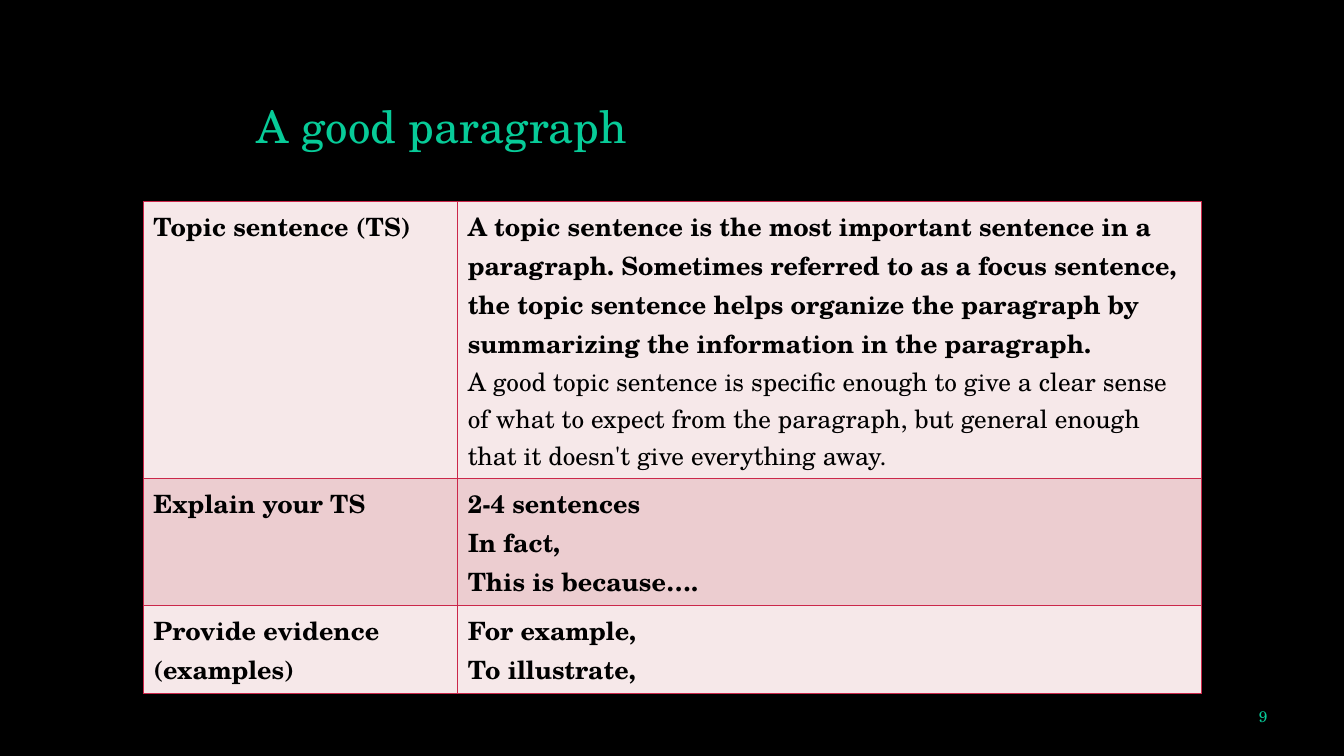
from dataclasses import dataclass

from lxml import etree
from pptx import Presentation
from pptx import util as u
from pptx.dml import color
from pptx.enum import text
from pptx.oxml import ns

FONT = "TeX Gyre Schola"
GREEN = "07CB98"
BLACK = "000000"
ROSE = "CB274A"
PALE = "F6E8E9"
PINK = "ECCDD0"


@dataclass
class Label:
    words: str
    box: tuple[float, float, float, float]
    size: float
    anchor: text.MSO_ANCHOR
    align: text.PP_ALIGN
    lead: float = 1.0


@dataclass
class Row:
    head: str
    body: list[str]
    high: float
    fill: str
    plain: int = -1


LABELS = [
    Label("A good paragraph", (2.45, 0.4, 9.47, 1.17), 32,
          text.MSO_ANCHOR.BOTTOM, text.PP_ALIGN.LEFT, 0.9),
    Label("9", (11.76, 6.98, 0.91, 0.25), 11,
          text.MSO_ANCHOR.MIDDLE, text.PP_ALIGN.RIGHT),
]

ROWS = [
    Row("Topic sentence (TS)", [
        "A topic sentence is the most important sentence in a paragraph. "
        "Sometimes referred to as a focus sentence, the topic sentence helps "
        "organize the paragraph by summarizing the information in the paragraph.",
        "A good topic sentence is specific enough to give a clear sense of what "
        "to expect from the paragraph, but general enough that it doesn't give "
        "everything away.",
    ], 2.75, PALE, plain=1),
    Row("Explain your TS",
        ["2-4 sentences", "In fact,", "This is because…."], 1.26, PINK),
    Row("Provide evidence (examples)",
        ["For example,", "To illustrate,"], 0.87, PALE),
]
COLS = [3.12, 7.38]


def rgb(code: str) -> color.RGBColor:
    return color.RGBColor.from_string(code)


def style(run, size: float, code: str, bold: bool = False) -> None:
    run.font.name = FONT
    run.font.size = u.Pt(size)
    run.font.bold = bold
    run.font.color.rgb = rgb(code)


def add_label(slide, label: Label) -> None:
    box = slide.shapes.add_textbox(*map(u.Inches, label.box))
    frame = box.text_frame
    frame.word_wrap = True
    frame.vertical_anchor = label.anchor
    frame.text = label.words
    para = frame.paragraphs[0]
    para.alignment = label.align
    para.line_spacing = label.lead
    style(para.runs[0], label.size, GREEN)


def add_edges(cell) -> None:
    props = cell._tc.get_or_add_tcPr()
    for side in ("lnL", "lnR", "lnT", "lnB"):
        line = etree.SubElement(props, ns.qn(f"a:{side}"), w=str(u.Pt(1)))
        fill = etree.SubElement(line, ns.qn("a:solidFill"))
        etree.SubElement(fill, ns.qn("a:srgbClr"), val=ROSE)


def fill_cell(cell, lines: list[str], back: str, plain: int = -1) -> None:
    add_edges(cell)
    cell.fill.solid()
    cell.fill.fore_color.rgb = rgb(back)
    cell.text_frame.text = "\n".join(lines)
    for i, para in enumerate(cell.text_frame.paragraphs):
        style(para.runs[0], 18, BLACK, i != plain)


def add_grid(slide) -> None:
    high = sum(row.high for row in ROWS)
    area = map(u.Inches, (1.42, 2, sum(COLS), high))
    table = slide.shapes.add_table(len(ROWS), len(COLS), *area).table
    table.first_row = False
    table.horz_banding = False
    for col, width in zip(table.columns, COLS):
        col.width = u.Inches(width)
    for i, row in enumerate(ROWS):
        table.rows[i].height = u.Inches(row.high)
        fill_cell(table.cell(i, 0), [row.head], row.fill)
        fill_cell(table.cell(i, 1), row.body, row.fill, row.plain)


def main() -> None:
    deck = Presentation()
    deck.slide_width = u.Inches(13.33)
    deck.slide_height = u.Inches(7.5)
    slide = deck.slides.add_slide(deck.slide_layouts[6])
    slide.background.fill.solid()
    slide.background.fill.fore_color.rgb = rgb(BLACK)
    for label in LABELS:
        add_label(slide, label)
    add_grid(slide)
    deck.save("out.pptx")


if __name__ == "__main__":
    main()
